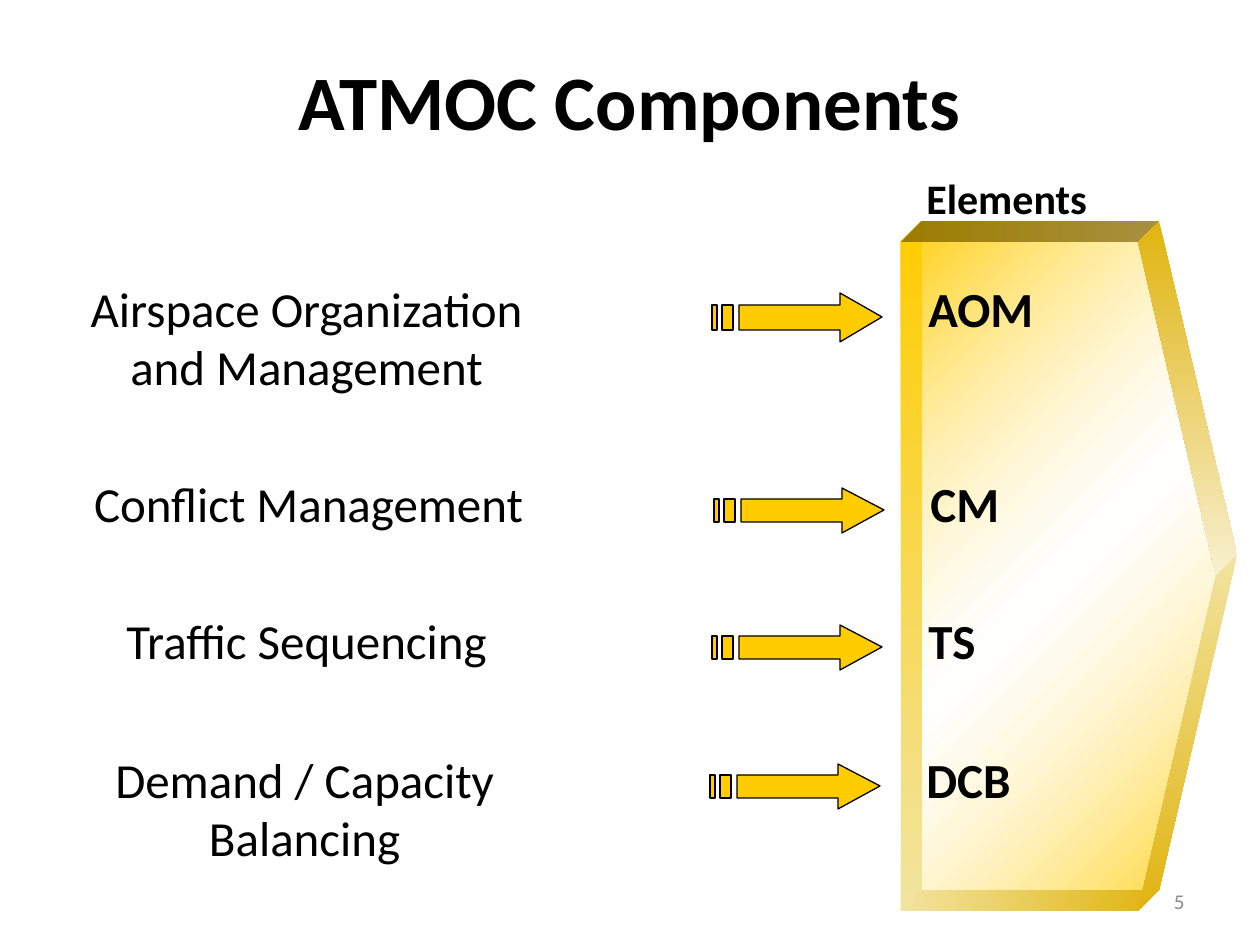
"""Build the ATMOC components slide: four components pointing to their elements."""
from lxml import etree
from pptx import Presentation
from pptx.dml.color import RGBColor
from pptx.enum.shapes import MSO_SHAPE
from pptx.enum.text import MSO_ANCHOR, MSO_AUTO_SIZE, PP_ALIGN
from pptx.oxml.ns import qn
from pptx.util import Pt

PENTAGON = MSO_SHAPE.PENTAGON
MIDDLE = MSO_ANCHOR.MIDDLE
GROW = MSO_AUTO_SIZE.SHAPE_TO_FIT_TEXT
LEFT, CENTER, RIGHT = PP_ALIGN.LEFT, PP_ALIGN.CENTER, PP_ALIGN.RIGHT

BLACK = RGBColor(0x00, 0x00, 0x00)
WHITE = RGBColor(0xFF, 0xFF, 0xFF)
GRAY = RGBColor(0x8C, 0x8C, 0x8C)
GOLD = RGBColor(0xFF, 0xCC, 0x00)
CREAM = RGBColor(0xEE, 0xEC, 0xE1)
DARK_GOLD = RGBColor(0x9C, 0x7C, 0x00)
OLIVE = RGBColor(0xA8, 0x90, 0x40)
AMBER = RGBColor(0xE0, 0xB4, 0x10)
SAND = RGBColor(0xF2, 0xE4, 0xA0)
PALE = RGBColor(0xF8, 0xF0, 0xD0)

FONT = "Calibri"
SCALE = 914400 / 126

TITLE = "ATMOC Components"
HEADING = "Elements"
PAGE_NUMBER = "5"
ROWS = [
    ("Airspace Organization and Management", "AOM", 272, 0, 130, 49),
    ("Conflict Management", "CM", 467, 2, 72, 45),
    ("Traffic Sequencing", "TS", 604, 0, 72, 45),
    ("Demand / Capacity Balancing", "DCB", 743, -2, 130, 45),
]

PANEL = (901, 242, 315, 669)
SHOULDER = 1138
DEPTH = 21
PANEL_STOPS = [(0, GOLD, 90), (50, WHITE, 30), (100, GOLD, 90)]


def emu(*lengths):
    return [round(length * SCALE) for length in lengths]


def style_text(frame, text, size, color=BLACK, bold=False, align=LEFT):
    frame.text = text
    frame.word_wrap = True
    para = frame.paragraphs[0]
    para.alignment = align
    font = para.runs[0].font
    font.name, font.size, font.bold = FONT, Pt(size), bold
    font.color.rgb = color
    return para.runs[0]


def add_text(page, area, text, size, **style):
    box = page.shapes.add_textbox(*emu(*area))
    style_text(box.text_frame, text, size, **style)
    box.text_frame.auto_size = GROW
    return box


def add_outline(page, contours):
    first, *others = contours
    builder = page.shapes.build_freeform(*first[0], scale=SCALE)
    builder.add_line_segments(first[1:], close=True)
    for contour in others:
        builder.move_to(*contour[0])
        builder.add_line_segments(contour[1:], close=True)
    shape = builder.convert_to_shape()
    shape.shadow.inherit = False
    return shape


def set_gradient(shape, stops, angle):
    shape.shadow.inherit = False
    shape.line.fill.background()
    shape.fill.gradient()
    shape.fill.gradient_angle = 360 - angle
    stop_list = shape._element.spPr.find(qn("a:gradFill")).find(qn("a:gsLst"))
    for stop in list(stop_list):
        stop_list.remove(stop)
    for position, color, opacity in stops:
        stop = etree.SubElement(stop_list, qn("a:gs"), pos=str(position * 1000))
        tint = etree.SubElement(stop, qn("a:srgbClr"), val=str(color))
        etree.SubElement(tint, qn("a:alpha"), val=str(opacity * 1000))


def add_title(page):
    title = page.shapes.title
    title.left, title.top, title.width, title.height = emu(21, 21, 1218, 158)
    title.text_frame.vertical_anchor = MIDDLE
    span = style_text(title.text_frame, TITLE, 44, bold=True, align=CENTER)
    effects = etree.Element(qn("a:effectLst"))
    shadow = etree.SubElement(effects, qn("a:outerShdw"), dist="38100", dir="2700000")
    etree.SubElement(shadow, qn("a:srgbClr"), val=str(CREAM))
    span.font._element.find(qn("a:solidFill")).addnext(effects)


def add_panel(page):
    left, top, width, height = PANEL
    bottom, tip = top + height, (left + width, top + height // 2)
    panel = page.shapes.add_shape(PENTAGON, *emu(*PANEL))
    panel.adjustments[0] = 0.25
    set_gradient(panel, PANEL_STOPS, 45)
    corners = {
        "top left": (left, top),
        "top right": (SHOULDER, top),
        "tip": tip,
        "bottom right": (SHOULDER, bottom),
        "bottom left": (left, bottom),
    }
    sides = [
        ("bottom left", "top left", SAND, GOLD, 270),
        ("bottom left", "bottom right", SAND, AMBER, 0),
        ("top left", "top right", DARK_GOLD, OLIVE, 0),
        ("top right", "tip", AMBER, PALE, 90),
        ("tip", "bottom right", SAND, AMBER, 90),
    ]
    for start, end, start_color, end_color, angle in sides:
        near = [corners[start], corners[end]]
        far = [(x + DEPTH, y - DEPTH) for x, y in reversed(near)]
        side = add_outline(page, [near + far])
        set_gradient(side, [(0, start_color, 100), (100, end_color, 100)], angle)


def add_arrow(page, left, top, height):
    upper, lower = top + height // 4, top + height - height // 4
    neck, shaft = left + 128, left + 27
    head = [(neck, top), (neck, upper), (shaft, upper), (shaft, lower),
            (neck, lower), (neck, top + height), (left + 170, top + height // 2)]
    stripes = [[(left + start, upper), (left + start, lower),
                (left + end, lower), (left + end, upper)]
               for start, end in [(10, 21), (0, 5)]]
    arrow = add_outline(page, [head] + stripes)
    arrow.fill.solid()
    arrow.fill.fore_color.rgb = GOLD
    arrow.line.color.rgb = BLACK
    arrow.line.width = Pt(0.75)


def main():
    deck = Presentation()
    deck.slide_width, deck.slide_height = emu(1260, 945)
    page = deck.slides.add_slide(deck.slide_layouts[5])
    add_title(page)
    number = add_text(page, (903, 876, 294, 50), PAGE_NUMBER, 12, color=GRAY, align=RIGHT)
    number.text_frame.auto_size = MSO_AUTO_SIZE.NONE
    number.text_frame.vertical_anchor = MIDDLE
    add_panel(page)
    add_text(page, (914, 166, 227, 63), HEADING, 24, bold=True)
    for component, element, top, shift, height, arrow_height in ROWS:
        add_arrow(page, 712 + shift, top + 21, arrow_height)
        add_text(page, (916 + shift, top, 260, 72), element, 28, bold=True)
        add_text(page, (52 + shift, top, 509, height), component, 28, align=CENTER)
    deck.save("out.pptx")


if __name__ == "__main__":
    main()
